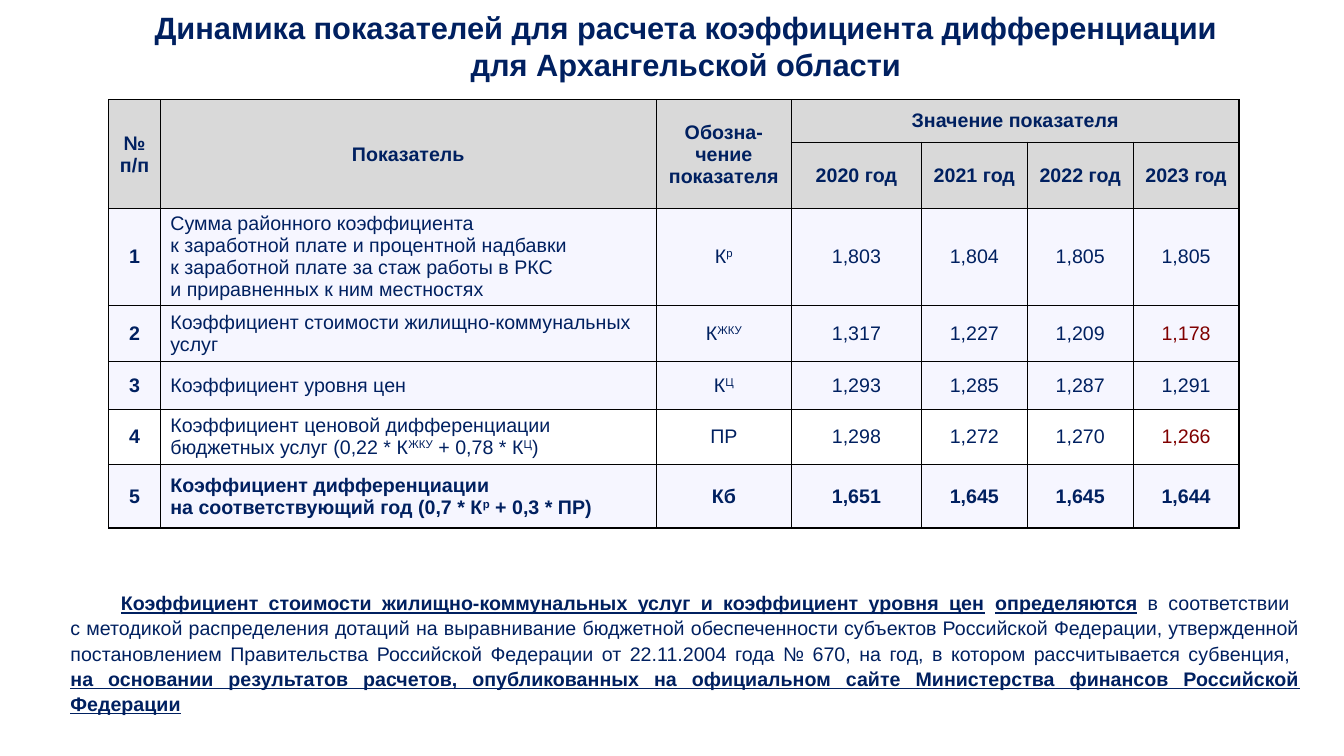
"""Build the slide on differentiation coefficient indicators for the region."""
import lxml.etree as etree
import pptx
import pptx.dml.color
import pptx.enum.text
import pptx.oxml.ns
import pptx.util

Inches, Pt = pptx.util.Inches, pptx.util.Pt
RGBColor = pptx.dml.color.RGBColor
ALIGN, ANCHOR = pptx.enum.text.PP_ALIGN, pptx.enum.text.MSO_ANCHOR
qn = pptx.oxml.ns.qn

NAVY = RGBColor(0x00, 0x20, 0x60)
MAROON = RGBColor(0x80, 0x00, 0x00)
GREY = RGBColor(0xD9, 0xD9, 0xD9)
PALE = RGBColor(0xF6, 0xF6, 0xFF)
WHITE = RGBColor(0xFF, 0xFF, 0xFF)


def write(p, text, size=14, bold=False, color=NAVY, underline=False):
    """Add runs to p; newlines break lines and ^marks^ enclose superscripts."""
    for i, line in enumerate(text.split("\n")):
        if i:
            p.add_line_break()
            etree.SubElement(p._p[-1], qn("a:rPr"), sz=str(size * 100))
        for j, part in enumerate(line.split("^")):
            if not part:
                continue
            r = p.add_run()
            r.text = part
            r.font.name, r.font.size = "Arial", Pt(size)
            r.font.bold, r.font.underline = bold, underline
            r.font.color.rgb = color
            if j % 2:
                r._r.get_or_add_rPr().set("baseline", "30000")


def style_cell(cell, fill):
    """Give a cell black borders, a fill, margins and a middle anchor."""
    tcPr = cell._tc.get_or_add_tcPr()
    for side in ("lnL", "lnR", "lnT", "lnB"):
        ln = etree.SubElement(tcPr, qn(f"a:{side}"), w="12700")
        etree.SubElement(etree.SubElement(ln, qn("a:solidFill")), qn("a:srgbClr"), val="000000")
    cell.fill.solid()
    cell.fill.fore_color.rgb = fill
    cell.margin_left = cell.margin_right = Inches(0.1)
    cell.margin_top = cell.margin_bottom = 0
    cell.vertical_anchor = ANCHOR.MIDDLE


prs = pptx.Presentation()
prs.slide_width, prs.slide_height = Inches(13.33), Inches(7.5)
s = prs.slides.add_slide(prs.slide_layouts[5])

title = s.shapes.title
title.left, title.top = Inches(0.36), Inches(0.02)
title.width, title.height = Inches(12.97), Inches(0.87)
tf = title.text_frame
tf.auto_size = pptx.enum.text.MSO_AUTO_SIZE.NONE
tf.vertical_anchor = ANCHOR.MIDDLE
p = tf.paragraphs[0]
p.alignment = ALIGN.CENTER
write(p, "Динамика показателей для расчета коэффициента дифференциации \n"
         "для Архангельской области ", size=22, bold=True)

rows = [
    ["№ п/п", "Показатель", "Обозна-чение показателя", "Значение показателя", "", "", ""],
    ["", "", "", "2020 год", "2021 год", "2022 год", "2023 год"],
    ["1", "Сумма районного коэффициента \nк заработной плате и процентной надбавки \n"
          "к заработной плате за стаж работы в РКС \nи приравненных к ним местностях",
     "К^р^", "1,803", "1,804", "1,805", "1,805"],
    ["2", "Коэффициент стоимости жилищно-коммунальных услуг",
     "К^ЖКУ^", "1,317", "1,227", "1,209", "1,178"],
    ["3", "Коэффициент уровня цен", "К^Ц^", "1,293", "1,285", "1,287", "1,291"],
    ["4", "Коэффициент ценовой дифференциации бюджетных услуг (0,22 * К^ЖКУ^ + 0,78 * К^Ц^)",
     "ПР", "1,298", "1,272", "1,270", "1,266"],
    ["5", "Коэффициент дифференциации \nна соответствующий год (0,7 * К^р^ + 0,3 * ПР)",
     "Кб", "1,651", "1,645", "1,645", "1,644"],
]
col_widths = [0.51, 4.92, 1.34, 1.29, 1.05, 1.05, 1.05]
row_heights = [0.42, 0.66, 0.96, 0.56, 0.47, 0.55, 0.63]
row_fills = [GREY, GREY, PALE, PALE, PALE, WHITE, PALE]
highlights = {"1,178", "1,266"}

table = s.shapes.add_table(len(rows), len(col_widths), Inches(1.08), Inches(0.99),
                           Inches(sum(col_widths)), Inches(sum(row_heights))).table
table.first_row = table.horz_banding = False
for col, width in zip(table.columns, col_widths):
    col.width = Inches(width)
for row, height in zip(table.rows, row_heights):
    row.height = Inches(height)
for c in range(3):
    table.cell(0, c).merge(table.cell(1, c))
table.cell(0, 3).merge(table.cell(0, 6))

for i, texts in enumerate(rows):
    for c, text in enumerate(texts):
        cell = table.cell(i, c)
        style_cell(cell, row_fills[i])
        p = cell.text_frame.paragraphs[0]
        p.alignment = ALIGN.LEFT if c == 1 and i > 1 else ALIGN.CENTER
        write(p, text, bold=i < 2 or i == 6 or c == 0,
              color=MAROON if text in highlights else NAVY)

tf = s.shapes.add_textbox(Inches(0.6), Inches(5.8), Inches(12.39), Inches(1.22)).text_frame
tf.word_wrap = True
p = tf.paragraphs[0]
p.alignment = ALIGN.JUSTIFY
p.line_spacing = 1.07
p._p.get_or_add_pPr().set("indent", str(Inches(0.5)))
note = [
    ("Коэффициент стоимости жилищно-коммунальных услуг и коэффициент уровня цен", True),
    (" ", False),
    ("определяются", True),
    (" в соответствии \nс методикой распределения дотаций на выравнивание бюджетной "
     "обеспеченности субъектов Российской Федерации, утвержденной постановлением "
     "Правительства Российской Федерации от 22.11.2004 года № 670, на год, "
     "в котором рассчитывается субвенция, \n", False),
    ("на основании результатов расчетов, опубликованных на официальном сайте "
     "Министерства финансов Российской Федерации", True),
]
for text, strong in note:
    write(p, text, bold=strong, underline=strong)

prs.save("out.pptx")
